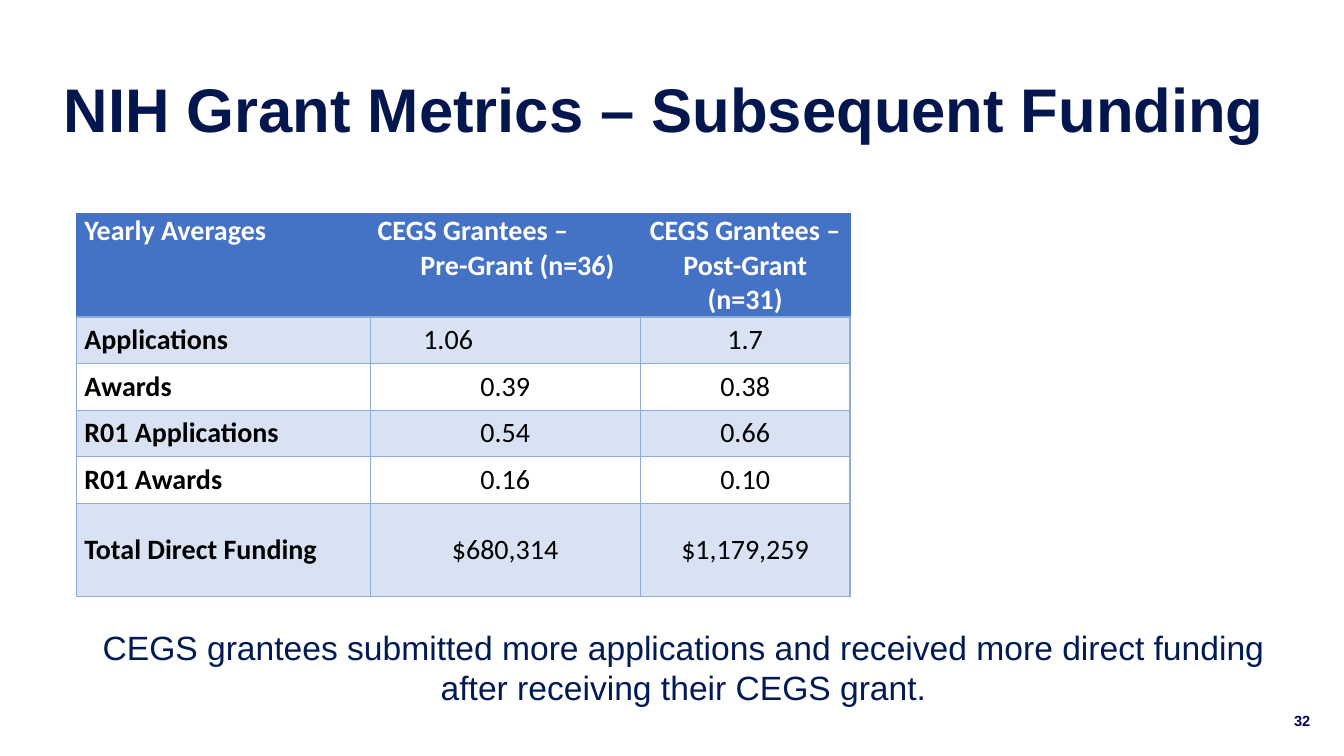
from lxml.etree import SubElement
from pptx import Presentation
from pptx.dml.color import RGBColor
from pptx.enum.text import MSO_ANCHOR as Anchor, PP_ALIGN as Align
from pptx.oxml.ns import qn
from pptx.util import Pt

TITLE = "NIH Grant Metrics – Subsequent Funding"
HEAD = ["Yearly Averages", "CEGS Grantees –\nPre-Grant (n=36)",
        "CEGS Grantees – Post-Grant (n=31)"]
BODY = [
    ("Applications", "1.06", "1.7"),
    ("Awards", "0.39", "0.38"),
    ("R01 Applications", "0.54", "0.66"),
    ("R01 Awards", "0.16", "0.10"),
    ("Total Direct Funding", "$680,314", "$1,179,259"),
]
NOTE = ("CEGS grantees submitted more applications and received more direct "
        "funding after receiving their CEGS grant.")
NUMBER = "32"

NAVY = RGBColor(0x04, 0x16, 0x4E)
INK = RGBColor(0x00, 0x1A, 0x56)
INDIGO = RGBColor(0x00, 0x00, 0x64)
BLUE = RGBColor(0x44, 0x72, 0xC4)
BAND = RGBColor(0xD9, 0xE2, 0xF3)
EDGE = RGBColor(0x8E, 0xAA, 0xDB)
WHITE = RGBColor(0xFF, 0xFF, 0xFF)
BLACK = RGBColor(0, 0, 0)

COLS = [209.5, 193, 149.8]
ROWS = [73.5] + [33.3] * 4 + [66.6]
PAD = 5.4


def style(para, size, color, bold=False, face="Arial", align=Align.LEFT):
    para.alignment = align
    font = para.font
    font.name, font.size, font.bold = face, Pt(size), bold
    font.color.rgb = color


def add_text(slide, text, place, size, color, bold=False,
             align=Align.LEFT, anchor=Anchor.MIDDLE, left=7.2):
    box = slide.shapes.add_textbox(*map(Pt, place))
    frame = box.text_frame
    frame.word_wrap = True
    frame.vertical_anchor = anchor
    frame.margin_left = Pt(left)
    frame.text = text
    style(frame.paragraphs[0], size, color, bold, align=align)
    return frame.paragraphs[0]


def set_edges(cell, color):
    """Draw a 1 pt line on all four sides; lines must precede the fill."""
    props = cell._tc.get_or_add_tcPr()
    for side in ("lnL", "lnR", "lnT", "lnB"):
        line = SubElement(props, qn("a:" + side), w=str(Pt(1)))
        fill = SubElement(line, qn("a:solidFill"))
        SubElement(fill, qn("a:srgbClr"), val=str(color))


def fill_cell(cell, text, row, col):
    head = row == 0
    set_edges(cell, BLUE if head else EDGE)
    if head or row % 2:
        cell.fill.solid()
        cell.fill.fore_color.rgb = BLUE if head else BAND
    else:
        cell.fill.background()
    cell.margin_left = cell.margin_right = Pt(PAD)
    cell.margin_top = cell.margin_bottom = 0
    cell.vertical_anchor = Anchor.TOP if head else Anchor.MIDDLE
    cell.text_frame.text = text
    for para in cell.text_frame.paragraphs:
        style(para, 20, WHITE if head else BLACK, head or col == 0,
              "Calibri", Align.CENTER if col else Align.LEFT)
    para.space_after = Pt(6)


def add_grid(slide):
    data = [HEAD, *BODY]
    shape = slide.shapes.add_table(len(ROWS), len(COLS), Pt(54.9), Pt(152.9),
                                   Pt(sum(COLS)), Pt(sum(ROWS)))
    table = shape.table
    for col, width in zip(table.columns, COLS):
        col.width = Pt(width)
    for row, height in zip(table.rows, ROWS):
        row.height = Pt(height)
    for r, line in enumerate(data):
        for c, text in enumerate(line):
            fill_cell(table.cell(r, c), text, r, c)

    first, second = table.cell(0, 1).text_frame.paragraphs
    first.alignment = second.alignment = Align.LEFT
    second._p.get_or_add_pPr().set("marL", str(Pt(30.5)))
    shifted = table.cell(1, 1)
    shifted.margin_left = Pt(38)
    shifted.text_frame.paragraphs[0].alignment = Align.LEFT


def main():
    deck = Presentation()
    deck.slide_width, deck.slide_height = Pt(960), Pt(540)
    slide = deck.slides.add_slide(deck.slide_layouts[6])
    add_text(slide, NUMBER, (917.3, 500.4, 27.4, 28.8), 10.5, INDIGO, True)
    title = add_text(slide, TITLE, (45.4, 27.4, 869, 106.6), 44, NAVY, True,
                     left=0)
    title.line_spacing = 0.9
    add_grid(slide)
    add_text(slide, NOTE, (45.4, 444.2, 885.6, 65.5), 24, INK,
             align=Align.CENTER, anchor=Anchor.TOP)
    deck.save("out.pptx")


if __name__ == "__main__":
    main()
